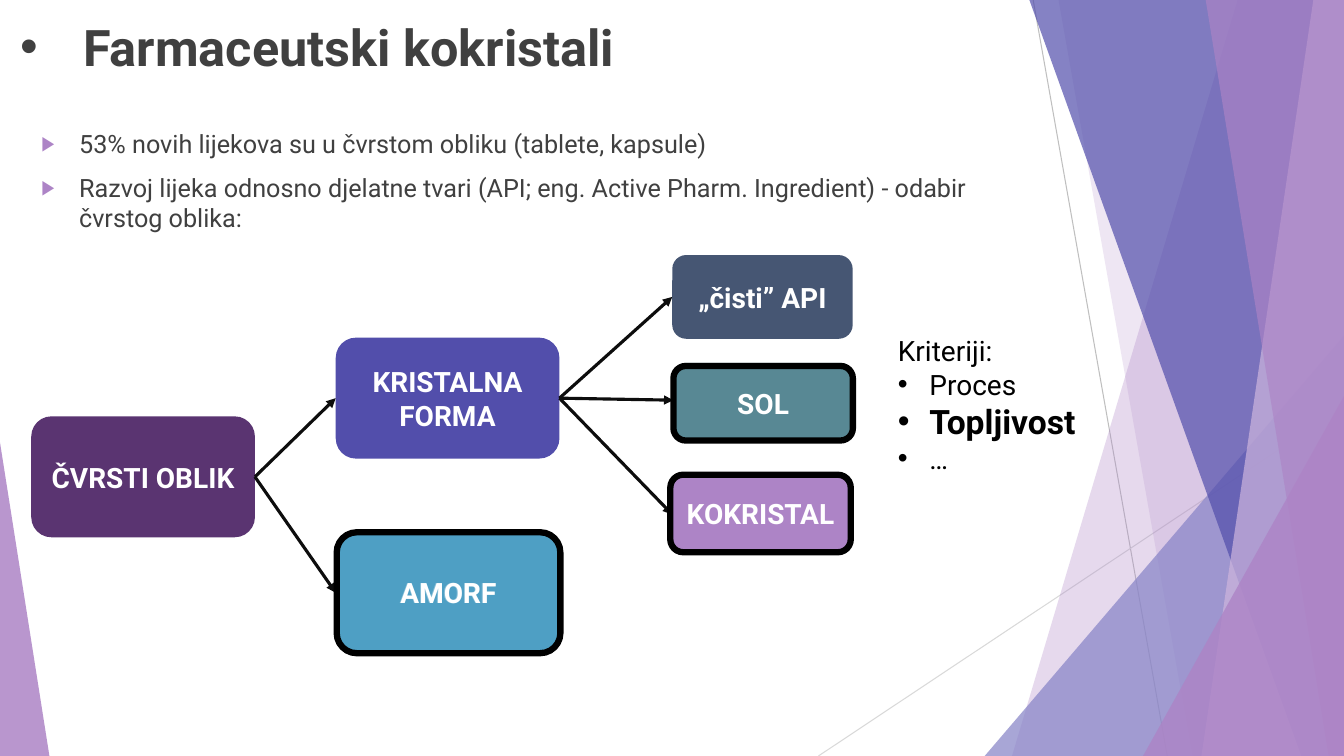
from lxml import etree
from pptx import Presentation
from pptx.dml.color import RGBColor
from pptx.enum.shapes import MSO_CONNECTOR, MSO_SHAPE
from pptx.enum.text import MSO_ANCHOR, MSO_AUTO_SIZE, PP_ALIGN
from pptx.oxml.ns import qn
from pptx.util import Pt

ROUNDED = MSO_SHAPE.ROUNDED_RECTANGLE
TRIANGLE = MSO_SHAPE.ISOSCELES_TRIANGLE
STRAIGHT = MSO_CONNECTOR.STRAIGHT
TOP, MIDDLE = MSO_ANCHOR.TOP, MSO_ANCHOR.MIDDLE
LEFT, CENTER = PP_ALIGN.LEFT, PP_ALIGN.CENTER
NO_FIT, GROW = MSO_AUTO_SIZE.NONE, MSO_AUTO_SIZE.SHAPE_TO_FIT_TEXT
LEFT_SIDE, RIGHT_SIDE = 1, 3
WIDTH, HEIGHT = 960, 540

COLORS = {
    "text": "404040", "black": "000000", "white": "FFFFFF", "arrow": "0D0D0D",
    "gray": "BFBFBF", "light gray": "D9D9D9", "lilac": "AD84C6",
    "pale lilac": "CEB5DD", "lavender": "8784C7", "indigo": "524EAB",
    "plum": "5A3471", "blue": "2489B6", "slate": "465673", "teal": "588894",
}


class SlideBuilder:
    font_name = "Roboto"

    def __init__(self, slide):
        self.slide = slide
        self.shapes = slide.shapes

    def color(self, name):
        return RGBColor.from_string(COLORS[name])

    def apply(self, target, formats):
        for attribute, value in formats.items():
            setattr(target, attribute, value)

    def paint(self, shape, color, opacity=100):
        shape.shadow.inherit = False
        shape.fill.solid()
        shape.fill.fore_color.rgb = self.color(color)
        shape.line.fill.background()
        if opacity < 100:
            tint = shape.element.spPr.find(".//" + qn("a:srgbClr"))
            etree.SubElement(tint, qn("a:alpha"), val=str(opacity * 1000))

    def band(self, top_x, bottom_x, color, opacity):
        outline = self.shapes.build_freeform(Pt(top_x), Pt(-0.6))
        corners = [(WIDTH, -0.6), (WIDTH, HEIGHT), (bottom_x, HEIGHT)]
        outline.add_line_segments([(Pt(x), Pt(y)) for x, y in corners])
        self.paint(outline.convert_to_shape(), color, opacity)

    def wedge(self, left, top, width, apex, color, opacity):
        wedge = self.shapes.add_shape(
            TRIANGLE, Pt(left), Pt(top), Pt(width), Pt(HEIGHT - top))
        wedge.adjustments[0] = apex
        self.paint(wedge, color, opacity)

    def line(self, start, end, color, weight):
        line = self.shapes.add_connector(STRAIGHT, *map(Pt, start + end))
        line.line.color.rgb = self.color(color)
        line.line.width = Pt(weight)
        etree.SubElement(line.element.spPr, qn("a:effectLst"))
        return line

    def arrow(self, source, target):
        arrow = self.line((0, 0), (0, 0), "arrow", 2.25)
        arrow.begin_connect(source, RIGHT_SIDE)
        arrow.end_connect(target, LEFT_SIDE)
        stroke = arrow.element.spPr.find(qn("a:ln"))
        etree.SubElement(stroke, qn("a:tailEnd"), type="triangle")

    def add_text(self, paragraph, text, size, color, bold=False, **layout):
        self.apply(paragraph, {"alignment": LEFT, "line_spacing": 1.0,
                               "space_before": Pt(0), **layout})
        run = paragraph.add_run()
        run.text = text
        self.apply(run.font, {"name": self.font_name, "size": Pt(size), "bold": bold})
        run.font.color.rgb = self.color(color)

    def bullet(self, paragraph, mark, indent, color=None, percent=100):
        properties = paragraph._p.get_or_add_pPr()
        properties.set("marL", str(Pt(indent)))
        properties.set("indent", str(-Pt(indent)))
        if color:
            tint = etree.SubElement(properties, qn("a:buClr"))
            etree.SubElement(tint, qn("a:srgbClr"), val=COLORS[color])
        etree.SubElement(properties, qn("a:buSzPct"), val=str(percent * 1000))
        etree.SubElement(properties, qn("a:buFont"), typeface="Arial")
        etree.SubElement(properties, qn("a:buChar"), char=mark)

    def paragraphs(self, frame, count):
        return [frame.paragraphs[0]] + [frame.add_paragraph() for _ in range(count - 1)]

    def place(self, holder, left, top, width, height):
        self.apply(holder, {"left": Pt(left), "top": Pt(top),
                            "width": Pt(width), "height": Pt(height)})
        self.apply(holder.text_frame, {"word_wrap": True, "auto_size": NO_FIT,
                                       "vertical_anchor": TOP})

    def title(self, text, bounds):
        heading = self.shapes.title
        self.place(heading, *bounds)
        paragraph = heading.text_frame.paragraphs[0]
        self.add_text(paragraph, text, 36, "text", True)
        self.bullet(paragraph, "•", 45)

    def body(self, points, bounds):
        holder = self.slide.placeholders[1]
        self.place(holder, *bounds)
        for paragraph, point in zip(self.paragraphs(holder.text_frame, len(points)), points):
            self.add_text(paragraph, point, 18, "text", space_before=Pt(10))
            self.bullet(paragraph, "▶", 27, "lilac", 80)

    def criteria(self, heading, items, bounds):
        box = self.shapes.add_textbox(*map(Pt, bounds))
        self.apply(box.text_frame, {"word_wrap": True, "auto_size": GROW})
        first, *rest = self.paragraphs(box.text_frame, len(items) + 1)
        self.add_text(first, heading, 20, "black")
        for paragraph, (text, size, bold) in zip(rest, items):
            self.add_text(paragraph, text, size, "black", bold)
            self.bullet(paragraph, "•", 22.5)

    def form(self, text, left, top, width, height, color, opacity=100, outlined=False):
        form = self.shapes.add_shape(ROUNDED, *map(Pt, (left, top, width, height)))
        self.paint(form, color, opacity)
        if outlined:
            form.line.color.rgb = self.color("black")
            form.line.width = Pt(4.5)
        self.apply(form.text_frame, {"word_wrap": True, "vertical_anchor": MIDDLE})
        self.add_text(form.text_frame.paragraphs[0], text, 20, "white", True, alignment=CENTER)
        return form


def main():
    presentation = Presentation()
    presentation.slide_width, presentation.slide_height = Pt(WIDTH), Pt(HEIGHT)
    builder = SlideBuilder(presentation.slides.add_slide(presentation.slide_layouts[1]))

    builder.line((738, 0), (833.76, HEIGHT), "gray", 0.75)
    builder.line((WIDTH, 290.2), (584.6, HEIGHT), "light gray", 0.75)
    builder.band(884.2, 722.9, "lilac", 30)
    builder.band(756, 851.8, "lilac", 20)
    builder.wedge(703.4, 239.8, 256.6, 1, "lavender", 72)
    builder.band(735.1, 929.5, "indigo", 70)
    builder.band(938.2, 858.2, "pale lilac", 70)
    builder.band(861.1, 949, "lilac", 65)
    builder.wedge(816.5, 283, 143.5, 1, "lilac", 80)
    builder.wedge(0, 316.1, 35.3, 0, "lilac", 85)

    builder.title("Farmaceutski kokristali", (7.2, 7.9, 676.8, 20.9))
    builder.body([
        "53% novih lijekova su u čvrstom obliku (tablete, kapsule)",
        "Razvoj lijeka odnosno djelatne tvari (API; eng. Active Pharm. Ingredient)"
        " - odabir čvrstog oblika:",
    ], (22.3, 87.8, 676.8, 305.3))

    large = (159.8, 86.4)
    solid = builder.form("ČVRSTI OBLIK", 22.3, 297.4, *large, "plum")
    builder.criteria("Kriteriji:", [
        ("Proces", 20, False), ("Topljivost", 24, True), ("…", 20, False),
    ], (634.3, 234.7, 190.1, 108.7))
    crystal = builder.form("KRISTALNA FORMA", 239.8, 241.2, *large, "indigo")
    amorphous = builder.form("AMORF", 239.8, 380.2, *large, "blue", 56)
    for branch in (crystal, amorphous):
        builder.arrow(solid, branch)

    crystal_forms = [
        builder.form("„čisti” API", 480.2, 182.2, 128.9, 59.8, "slate"),
        builder.form("SOL", 481, 259.2, 128.2, 53.3, "teal"),
        builder.form("KOKRISTAL", 480.2, 339.8, 128.9, 55.4, "lilac"),
    ]
    for branch in crystal_forms:
        builder.arrow(crystal, branch)

    for text, left, top, width, height, color, opacity in [
        ("AMORF", 240.5, 380.2, *large, "blue", 56),
        ("SOL", 481, 261.4, 128.2, 53.3, "teal", 100),
        ("KOKRISTAL", 478.8, 339.1, 128.9, 55.4, "lilac", 100),
    ]:
        builder.form(text, left, top, width, height, color, opacity, outlined=True)

    presentation.save("out.pptx")


if __name__ == "__main__":
    main()
